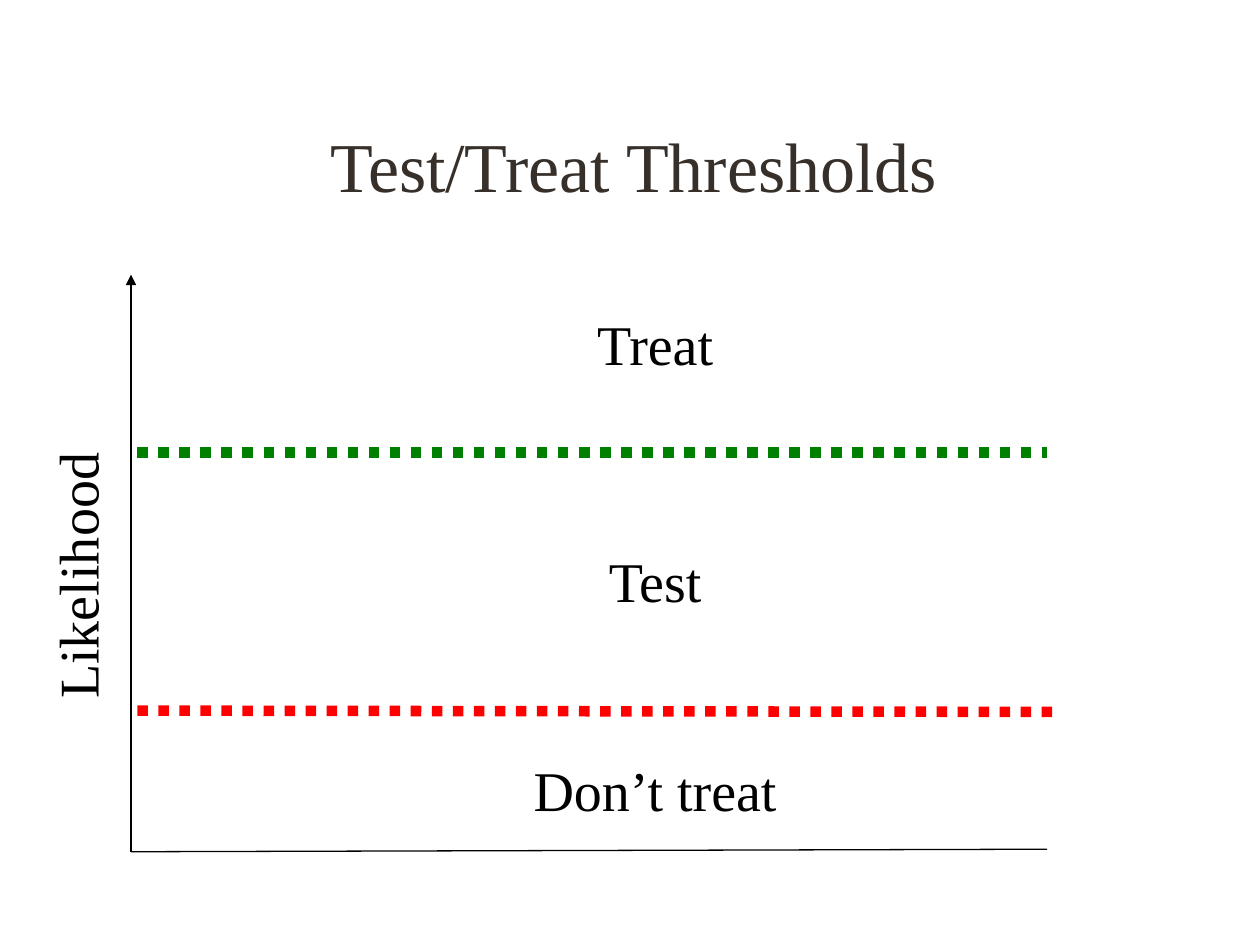
from lxml.etree import SubElement
from pptx import Presentation
from pptx.dml.color import RGBColor
from pptx.enum.dml import MSO_LINE
from pptx.enum.shapes import MSO_CONNECTOR
from pptx.enum.text import MSO_ANCHOR, MSO_AUTO_SIZE, PP_ALIGN
from pptx.oxml.ns import qn
from pptx.util import Inches, Pt

FONT = "Times New Roman"
COLORS = {
    "title": "37302A",
    "ink": "000000",
    "test_threshold": "FF0000",
    "treat_threshold": "008000",
}
ORIGIN = (1.04, 6.76)
ZONE_CENTER = 5.2
LABEL_HEIGHT = 0.64


def add_line(slide, start, end, color, width=0.75, dash=None, arrow_at_start=False):
    line = slide.shapes.add_connector(
        MSO_CONNECTOR.STRAIGHT, *(Inches(v) for v in (*start, *end)))
    line.line.color.rgb = RGBColor.from_string(COLORS[color])
    line.line.width = Pt(width)
    if dash is not None:
        line.line.dash_style = dash
    properties = line._element.spPr
    if arrow_at_start:
        SubElement(properties.find(qn("a:ln")), qn("a:headEnd"), type="triangle")
    SubElement(properties, qn("a:effectLst"))


def add_text(slide, text, left, top, width, height, size, color="ink"):
    box = slide.shapes.add_textbox(
        Inches(left), Inches(top), Inches(width), Inches(height))
    paragraph = box.text_frame.paragraphs[0]
    paragraph.text = text
    paragraph.alignment = PP_ALIGN.CENTER
    paragraph.font.name = FONT
    paragraph.font.size = Pt(size)
    paragraph.font.color.rgb = RGBColor.from_string(COLORS[color])
    return box


def add_label(slide, text, center, top, width):
    label = add_text(slide, text, center - width / 2, top, width, LABEL_HEIGHT, 32)
    label.text_frame.word_wrap = False
    label.text_frame.auto_size = MSO_AUTO_SIZE.SHAPE_TO_FIT_TEXT
    return label


def main():
    prs = Presentation()
    prs.slide_width, prs.slide_height = Inches(10), Inches(7.5)
    slide = prs.slides.add_slide(prs.slide_layouts[6])

    # Title
    title = add_text(slide, "Test/Treat Thresholds", 0.78, 0.68, 8.5, 1.25, 40, "title")
    title.text_frame.word_wrap = True
    title.text_frame.vertical_anchor = MSO_ANCHOR.MIDDLE

    # Axes
    add_line(slide, (ORIGIN[0], 2.18), ORIGIN, "ink", arrow_at_start=True)
    add_line(slide, ORIGIN, (8.31, 6.74), "ink")

    # Thresholds between the zones
    for color, start, end in (
        ("test_threshold", (1.09, 5.64), (8.35, 5.65)),
        ("treat_threshold", (1.09, 3.59), (8.31, 3.59)),
    ):
        add_line(slide, start, end, color, width=6, dash=MSO_LINE.ROUND_DOT)

    # Axis label
    likelihood = add_label(slide, "Likelihood", 0.61, 4.25, 2.17)
    likelihood.rotation = 270

    # Zone labels
    for zone, top, width in (
        ("Treat", 2.41, 1.13),
        ("Test", 4.29, 0.94),
        ("Don’t treat", 5.95, 2.15),
    ):
        add_label(slide, zone, ZONE_CENTER, top, width)

    prs.save("out.pptx")


if __name__ == "__main__":
    main()
